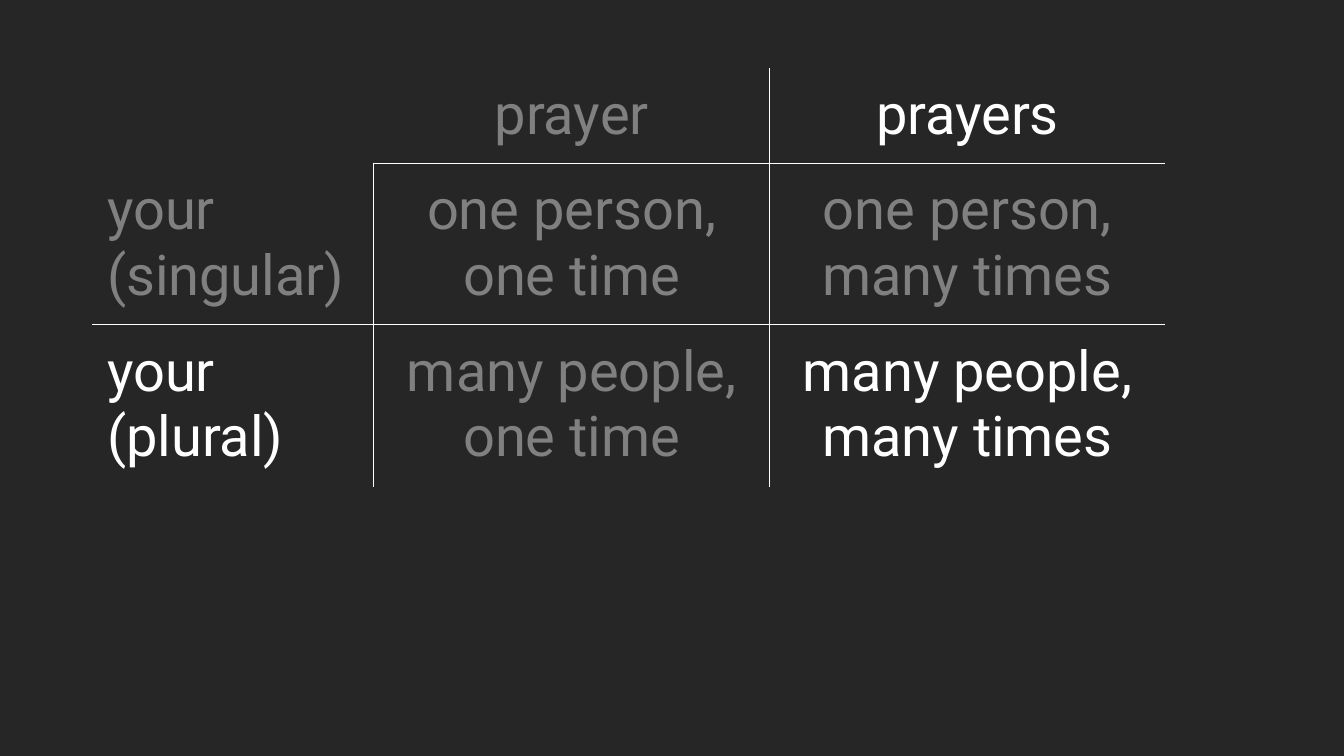
from lxml import etree
from pptx import Presentation
from pptx.dml.color import RGBColor
from pptx.enum.text import PP_ALIGN
from pptx.oxml.ns import qn
from pptx.util import Pt

PX = 9525
LEFT, CENTER = PP_ALIGN.LEFT, PP_ALIGN.CENTER
BACKGROUND, GREY, WHITE = "262626", "808080", "FFFFFF"
COL_WIDTHS = (268, 377, 377)
ROW_HEIGHTS = (90, 154, 154)
MEANINGS = (
    (("", GREY), ("prayer", GREY), ("prayers", WHITE)),
    (("your\v(singular)", GREY), ("one person,\vone time", GREY),
     ("one person,\vmany times", GREY)),
    (("your\v(plural)", WHITE), ("many people,\vone time", GREY),
     ("many people,\vmany times", WHITE)),
)


def px(n):
    return n * PX


def rgb(value):
    return RGBColor.from_string(value)


def set_borders(cell, row, col):
    inner = {
        "L": col == 2 or (col == 1 and row > 0),
        "R": col == 1 or (col == 0 and row > 0),
        "T": row == 2 or (row == 1 and col > 0),
        "B": row == 1 or (row == 0 and col > 0),
    }
    tc_pr = cell._tc.get_or_add_tcPr()
    for side, shown in inner.items():
        ln = etree.SubElement(tc_pr, qn(f"a:ln{side}"), w=str(Pt(1)))
        if shown:
            fill = etree.SubElement(ln, qn("a:solidFill"))
            etree.SubElement(fill, qn("a:srgbClr"), val=WHITE)
        else:
            etree.SubElement(ln, qn("a:noFill"))


def fill_cell(cell, text, color, align):
    for side in ("left", "right", "top", "bottom"):
        setattr(cell, f"margin_{side}", px(14))
    cell.fill.background()
    p = cell.text_frame.paragraphs[0]
    p.text = text
    p.alignment = align
    for r in p.runs:
        for name, value in {"name": "Roboto", "size": Pt(40)}.items():
            setattr(r.font, name, value)
        r.font.color.rgb = rgb(color)


def add_meaning_table(s, x, y):
    width, height = sum(COL_WIDTHS), sum(ROW_HEIGHTS)
    table = s.shapes.add_table(3, 3, px(x), px(y), px(width), px(height)).table
    for name, value in {"first_row": False, "horz_banding": False}.items():
        setattr(table, name, value)
    for column, w in zip(table.columns, COL_WIDTHS):
        column.width = px(w)
    for row, h in zip(table.rows, ROW_HEIGHTS):
        row.height = px(h)
    for i, meanings in enumerate(MEANINGS):
        for j, (text, color) in enumerate(meanings):
            cell = table.cell(i, j)
            set_borders(cell, i, j)
            fill_cell(cell, text, color, CENTER if j else LEFT)


def main():
    prs = Presentation()
    prs.slide_width, prs.slide_height = px(1280), px(720)
    s = prs.slides.add_slide(prs.slide_layouts[6])
    s.background.fill.solid()
    s.background.fill.fore_color.rgb = rgb(BACKGROUND)
    add_meaning_table(s, 88, 65)
    prs.save("out.pptx")


if __name__ == "__main__":
    main()
